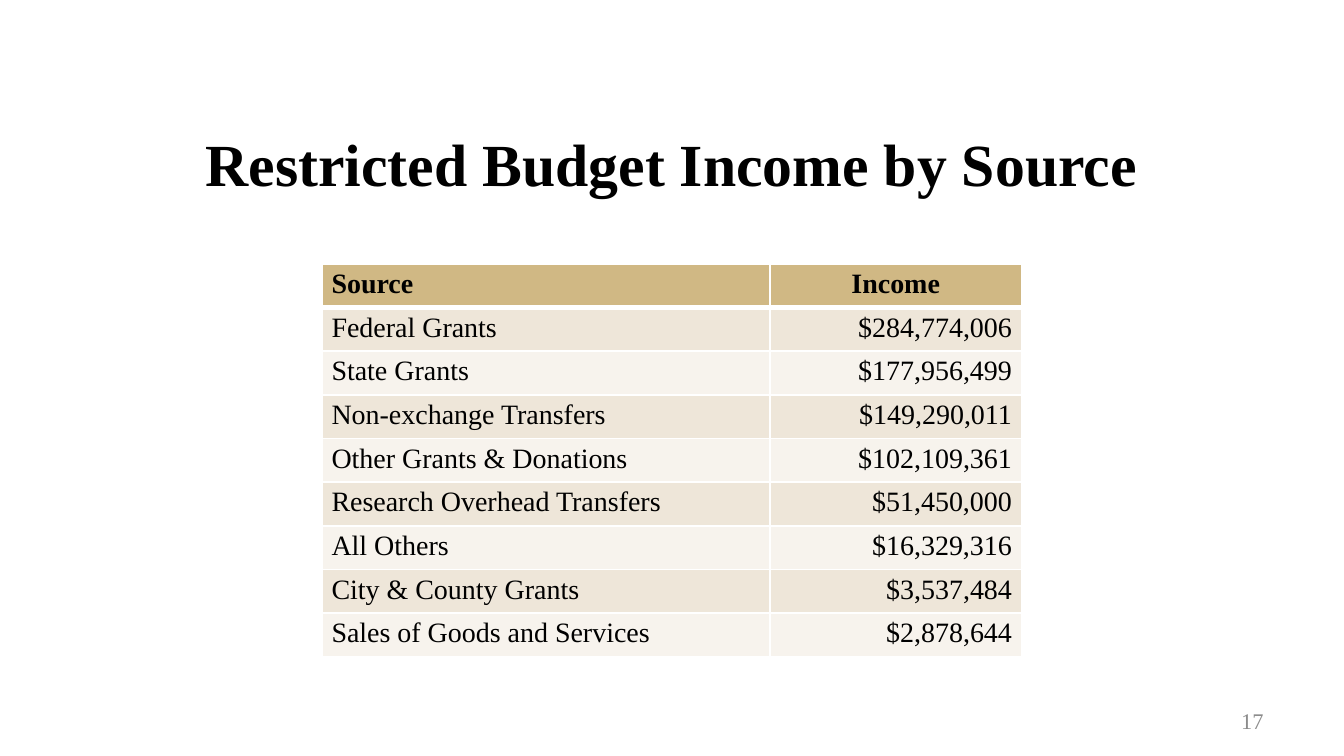
"""Build the slide on restricted budget income by source."""
import pptx
import pptx.dml.color
import pptx.enum.text
import pptx.oxml
import pptx.oxml.ns
import pptx.util

Pt = pptx.util.Pt
RGBColor = pptx.dml.color.RGBColor
ALIGN = pptx.enum.text.PP_ALIGN
MIDDLE = pptx.enum.text.MSO_ANCHOR.MIDDLE

BLACK = RGBColor(0x00, 0x00, 0x00)
GRAY = RGBColor(0x8C, 0x8C, 0x8C)
WHITE = RGBColor(0xFF, 0xFF, 0xFF)
GOLD = RGBColor(0xD0, 0xB8, 0x84)
BANDS = (RGBColor(0xEE, 0xE6, 0xD9), RGBColor(0xF7, 0xF3, 0xED))

INCOME_ROWS = (
    ("Source", "Income"),
    ("Federal Grants", "$284,774,006"),
    ("State Grants", "$177,956,499"),
    ("Non-exchange Transfers", "$149,290,011"),
    ("Other Grants & Donations", "$102,109,361"),
    ("Research Overhead Transfers", "$51,450,000"),
    ("All Others", "$16,329,316"),
    ("City & County Grants", "$3,537,484"),
    ("Sales of Goods and Services", "$2,878,644"),
)


class SlideBuilder:
    """Hold the text style and the current slide."""

    font_name = "Times New Roman"

    def __init__(self, slide):
        self.slide = slide

    def style_text(self, text_frame, text, size, color, alignment, bold=False):
        text_frame.text = text
        paragraph = text_frame.paragraphs[0]
        paragraph.alignment = alignment
        font = paragraph.runs[0].font
        font.name = self.font_name
        font.size = Pt(size)
        font.bold = bold
        font.color.rgb = color

    def text_box(self, left, top, width, height, *text_style):
        shape = self.slide.shapes.add_textbox(Pt(left), Pt(top), Pt(width), Pt(height))
        shape.text_frame.word_wrap = True
        shape.text_frame.vertical_anchor = MIDDLE
        self.style_text(shape.text_frame, *text_style)

    def border(self, cell, side, width):
        properties = cell._tc.get_or_add_tcPr()
        properties.append(pptx.oxml.parse_xml(
            f'<a:{side} {pptx.oxml.ns.nsdecls("a")} w="{Pt(width)}">'
            f'<a:solidFill><a:srgbClr val="{WHITE}"/></a:solidFill></a:{side}>'
        ))

    def table(self, left, top, column_widths, row_height, rows):
        shape = self.slide.shapes.add_table(
            len(rows), len(column_widths), Pt(left), Pt(top),
            Pt(sum(column_widths)), Pt(row_height * len(rows)),
        )
        table = shape.table
        for column, width in zip(table.columns, column_widths):
            column.width = Pt(width)
        for row_index, values in enumerate(rows):
            table.rows[row_index].height = Pt(row_height)
            header = row_index == 0
            fill = GOLD if header else BANDS[(row_index - 1) % 2]
            alignments = (ALIGN.LEFT, ALIGN.CENTER if header else ALIGN.RIGHT)
            for column_index, value in enumerate(values):
                cell = table.cell(row_index, column_index)
                cell.margin_left = cell.margin_right = Pt(5.2)
                cell.margin_top = cell.margin_bottom = Pt(2.6)
                self.style_text(cell.text_frame, value, 15, BLACK,
                                alignments[column_index], header)
                for side in ("lnL", "lnR", "lnT", "lnB"):
                    below_header = (row_index, side) in ((0, "lnB"), (1, "lnT"))
                    self.border(cell, side, 3 if below_header else 1)
                cell.fill.solid()
                cell.fill.fore_color.rgb = fill


def main():
    presentation = pptx.Presentation()
    presentation.slide_width = Pt(720)
    presentation.slide_height = Pt(405)
    builder = SlideBuilder(presentation.slides.add_slide(presentation.slide_layouts[6]))
    builder.text_box(36, 58.5, 648, 57.6, "Restricted Budget Income by Source",
                     32, BLACK, ALIGN.CENTER, True)
    builder.text_box(516, 375.4, 168, 21.6, "17", 12, GRAY, ALIGN.RIGHT)
    builder.table(172.4, 141.4, (240, 135), 23.4, INCOME_ROWS)
    presentation.save("out.pptx")


if __name__ == "__main__":
    main()
